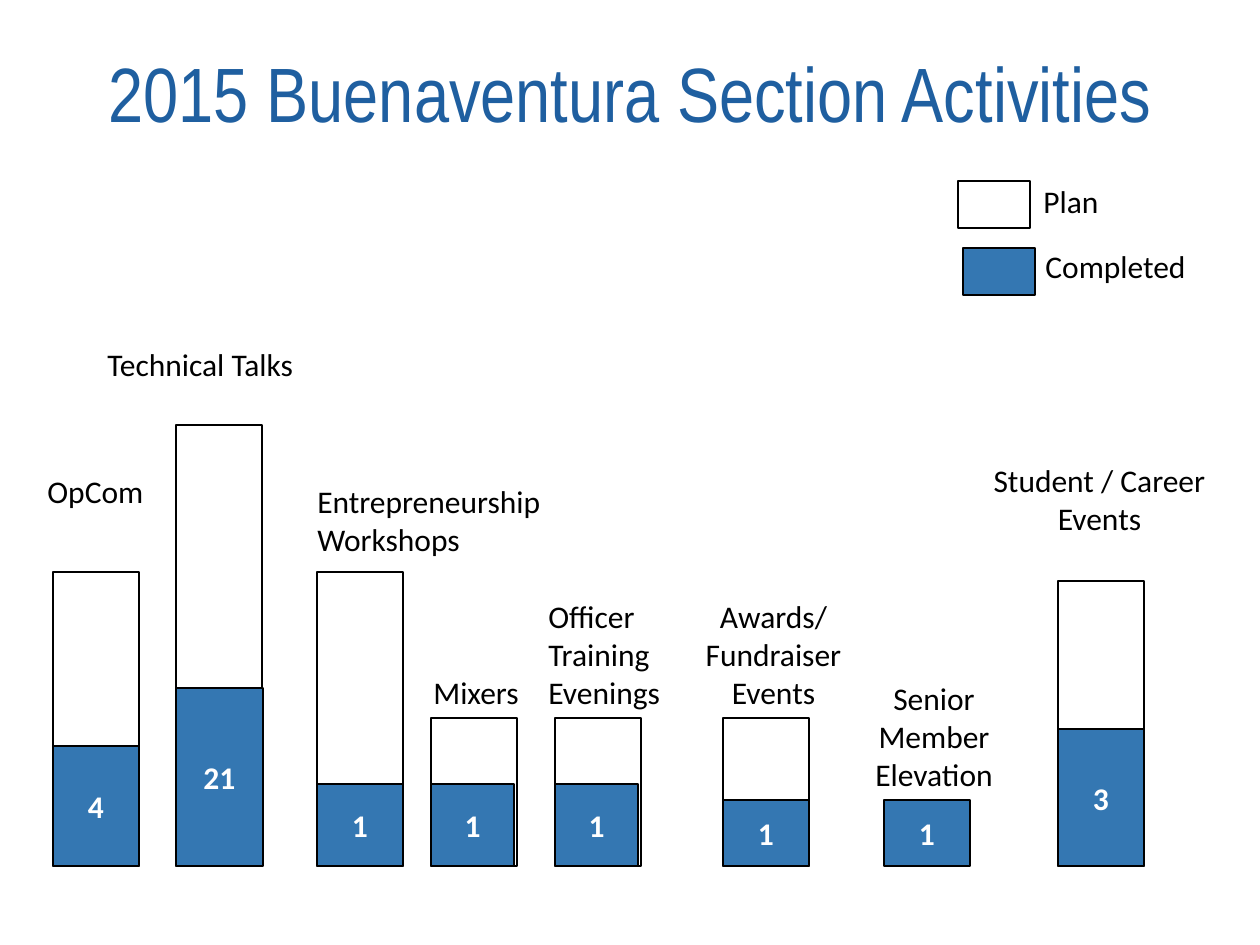
from dataclasses import dataclass
from typing import Optional

from pptx import Presentation
from pptx.dml.color import RGBColor as Rgb
from pptx.enum.shapes import MSO_SHAPE as Preset
from pptx.enum.text import MSO_ANCHOR as Anchor, MSO_AUTO_SIZE as AutoSize, PP_ALIGN as Align
from pptx.util import Pt

EMU_PER_PX = 914400 / 126


@dataclass(frozen=True)
class Theme:
    title_color: Rgb = Rgb(0x1F, 0x5F, 0xA0)
    completed: Rgb = Rgb(0x34, 0x77, 0xB2)
    ink: Rgb = Rgb(0, 0, 0)
    count_color: Rgb = Rgb(255, 255, 255)
    title_font: str = "Arial Narrow"
    body_font: str = "Calibri"
    title_size: int = 44
    body_size: int = 18
    outline: int = 1


@dataclass(frozen=True)
class Label:
    text: str
    left: int
    top: int
    width: int
    align: Align = Align.LEFT


@dataclass(frozen=True)
class Activity:
    label: Label
    left: int
    plan_height: int
    completed_height: int
    count: int
    completed_width: int = 86


@dataclass(frozen=True)
class LegendEntry:
    label: Label
    left: int
    top: int
    fill: Optional[Rgb]


THEME = Theme()
BASELINE = 866
BAR_WIDTH = 86
KEY_WIDTH, KEY_HEIGHT = 72, 47
LINE_HEIGHT, LABEL_PADDING = 38, 12

ACTIVITIES = [
    Activity(Label("OpCom", 35, 466, 122), 53, 294, 120, 4),
    Activity(Label("Technical Talks", 95, 339, 213), 176, 441, 178, 21, 87),
    Activity(Label("Entrepreneurship\nWorkshops", 305, 476, 251), 317, 294, 82, 1),
    Activity(Label("Mixers", 421, 667, 112), 431, 148, 82, 1, 83),
    Activity(Label("Officer\nTraining\nEvenings", 536, 591, 139), 555, 148, 82, 1, 83),
    Activity(Label("Awards/\nFundraiser\nEvents", 692, 591, 163, Align.CENTER), 723, 148, 66, 1),
    Activity(Label("Senior\nMember\nElevation", 862, 673, 144, Align.CENTER), 884, 0, 66, 1),
    Activity(Label("Student / Career\nEvents", 980, 455, 239, Align.CENTER), 1058, 285, 137, 3),
]

LEGEND = [
    LegendEntry(Label("Plan", 1031, 176, 81), 958, 181, None),
    LegendEntry(Label("Completed", 1033, 241, 168), 963, 248, THEME.completed),
]


def px(length: int) -> int:
    return round(length * EMU_PER_PX)


def style_text(frame, font: str, size: int, color: Rgb, align: Align, bold: bool = False) -> None:
    for paragraph in frame.paragraphs:
        paragraph.alignment = align
        for run in paragraph.runs:
            run.font.name = font
            run.font.size = Pt(size)
            run.font.color.rgb = color
            run.font.bold = bold


def draw_title(slide, text: str) -> None:
    heading = slide.shapes.add_textbox(px(32), px(6), px(1197), px(183))
    frame = heading.text_frame
    frame.word_wrap = True
    frame.vertical_anchor = Anchor.MIDDLE
    frame.text = text
    frame.paragraphs[0].line_spacing = 0.9
    style_text(frame, THEME.title_font, THEME.title_size, THEME.title_color, Align.CENTER)


def draw_label(slide, label: Label) -> None:
    height = LABEL_PADDING + LINE_HEIGHT * len(label.text.splitlines())
    caption = slide.shapes.add_textbox(px(label.left), px(label.top), px(label.width), px(height))
    frame = caption.text_frame
    frame.word_wrap = False
    frame.auto_size = AutoSize.SHAPE_TO_FIT_TEXT
    frame.text = label.text
    style_text(frame, THEME.body_font, THEME.body_size, THEME.ink, label.align)


def draw_block(slide, left: int, top: int, width: int, height: int,
               fill: Optional[Rgb] = None, count: Optional[int] = None) -> None:
    block = slide.shapes.add_shape(Preset.RECTANGLE, px(left), px(top), px(width), px(height))
    block.shadow.inherit = False
    block.line.color.rgb = THEME.ink
    block.line.width = Pt(THEME.outline)
    if fill is None:
        block.fill.background()
    else:
        block.fill.solid()
        block.fill.fore_color.rgb = fill
    if count is not None:
        frame = block.text_frame
        frame.vertical_anchor = Anchor.MIDDLE
        frame.text = str(count)
        style_text(frame, THEME.body_font, THEME.body_size, THEME.count_color, Align.CENTER, bold=True)


def draw_activity(slide, activity: Activity) -> None:
    if activity.plan_height:
        draw_block(slide, activity.left, BASELINE - activity.plan_height, BAR_WIDTH, activity.plan_height)
    draw_block(slide, activity.left, BASELINE - activity.completed_height, activity.completed_width,
               activity.completed_height, THEME.completed, activity.count)
    draw_label(slide, activity.label)


def draw_legend_entry(slide, entry: LegendEntry) -> None:
    draw_block(slide, entry.left, entry.top, KEY_WIDTH, KEY_HEIGHT, entry.fill)
    draw_label(slide, entry.label)


def main() -> None:
    deck = Presentation()
    deck.slide_width, deck.slide_height = px(1260), px(945)
    slide = deck.slides.add_slide(deck.slide_layouts[6])
    draw_title(slide, "2015 Buenaventura Section Activities")
    for activity in ACTIVITIES:
        draw_activity(slide, activity)
    for entry in LEGEND:
        draw_legend_entry(slide, entry)
    deck.save("out.pptx")


if __name__ == "__main__":
    main()
